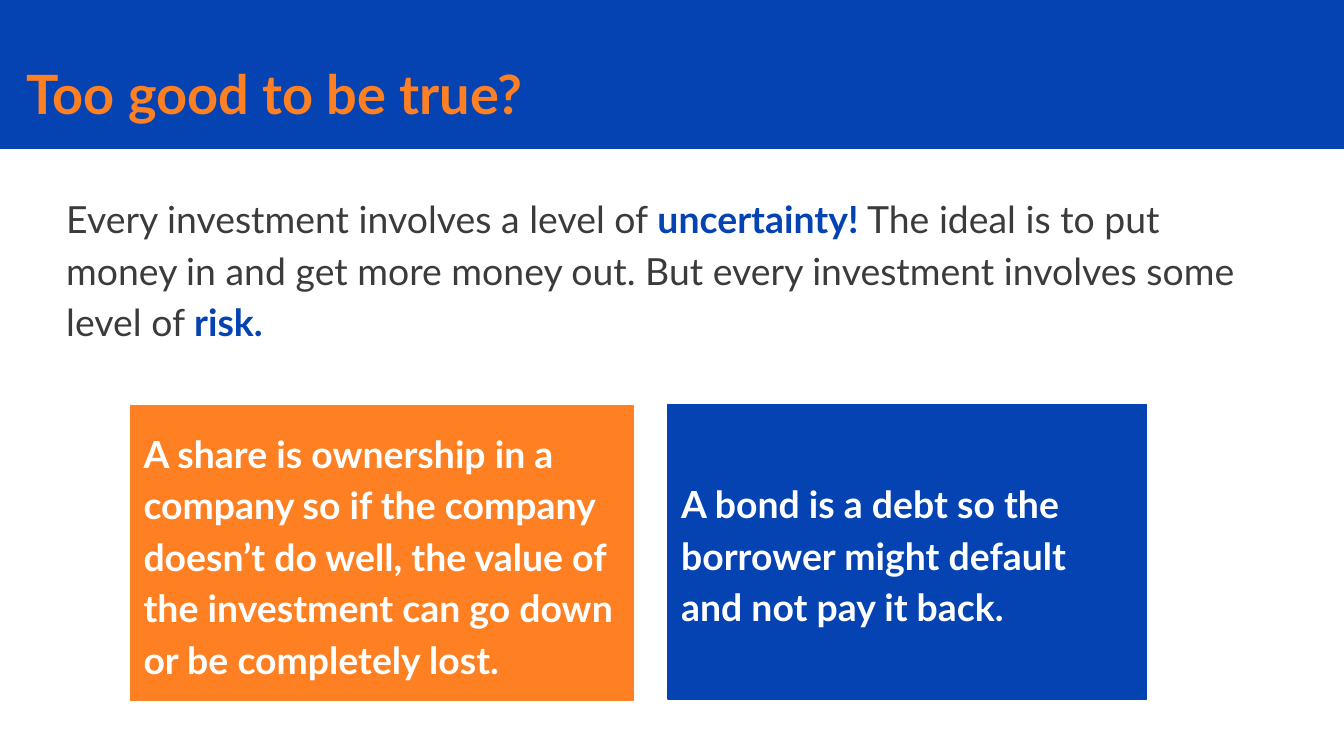
import pptx
import pptx.dml.color
import pptx.enum.shapes
import pptx.enum.text
import pptx.util

BLUE, ORANGE, WHITE, GREY = "0543B3", "FF8022", "FFFFFF", "3B3B3B"

deck = pptx.Presentation()
deck.slide_width = pptx.util.Inches(10)
deck.slide_height = deck.slide_width * 9 // 16
slide = deck.slides.add_slide(deck.slide_layouts[5])

# One percent of the slide's width and height
COLUMN, ROW = deck.slide_width / 100, deck.slide_height / 100


def rgb(color):
    return pptx.dml.color.RGBColor.from_string(color)


def write(frame, text, *, color, size=20, bold=False, anchor="TOP"):
    """Append a run to the frame's first paragraph and format both."""
    frame.word_wrap = True
    frame.auto_size = pptx.enum.text.MSO_AUTO_SIZE.NONE
    frame.vertical_anchor = pptx.enum.text.MSO_ANCHOR[anchor]
    frame.margin_left = frame.margin_right = pptx.util.Inches(0.1)
    frame.margin_top = frame.margin_bottom = pptx.util.Inches(0.1)
    paragraph = frame.paragraphs[0]
    paragraph.alignment = pptx.enum.text.PP_ALIGN.LEFT
    paragraph.line_spacing = 1.15
    run = paragraph.add_run()
    run.text = text
    run.font.name = "Lato"
    run.font.size = pptx.util.Pt(size)
    run.font.bold = bold
    run.font.color.rgb = rgb(color)


heading = slide.shapes.title
heading.left, heading.top = int(COLUMN), int(ROW * 4.9)
heading.width, heading.height = int(COLUMN * 99.6), int(ROW * 12.3)
write(heading.text_frame, "Too good to be true?", color=ORANGE, size=29, bold=True)

band = slide.shapes.add_shape(
    pptx.enum.shapes.MSO_SHAPE.RECTANGLE, 0, 0, deck.slide_width, int(ROW * 19.7))
band.shadow.inherit = False
band.fill.solid()
band.fill.fore_color.rgb = rgb(BLUE)
band.line.fill.background()
heading.element.addprevious(band.element)

intro = slide.shapes.add_textbox(
    int(COLUMN * 3.95), int(ROW * 23.3), int(COLUMN * 89), int(ROW * 30.2)).text_frame
for phrase, stressed in [
    ("Every investment involves a level of ", False),
    ("uncertainty!", True),
    (" The ideal is to put money in and get more money out. "
     "But every investment involves some level of ", False),
    ("risk.", True),
]:
    write(intro, phrase, color=BLUE if stressed else GREY, bold=stressed)

for left, top, width, color, statement in [
    (49.7, 53.5, 35.6, BLUE,
     "A bond is a debt so the borrower might default and not pay it back."),
    (9.7, 53.65, 37.4, ORANGE,
     "A share is ownership in a company so if the company doesn’t do well, "
     "the value of the investment can go down or be completely lost."),
]:
    panel = slide.shapes.add_shape(
        pptx.enum.shapes.MSO_SHAPE.RECTANGLE,
        int(COLUMN * left), int(ROW * top), int(COLUMN * width), int(ROW * 39))
    panel.shadow.inherit = False
    panel.fill.solid()
    panel.fill.fore_color.rgb = rgb(color)
    panel.line.color.rgb = rgb(color)
    panel.line.width = pptx.util.Pt(0.75)
    write(panel.text_frame, statement, color=WHITE, bold=True, anchor="MIDDLE")

deck.save("out.pptx")
